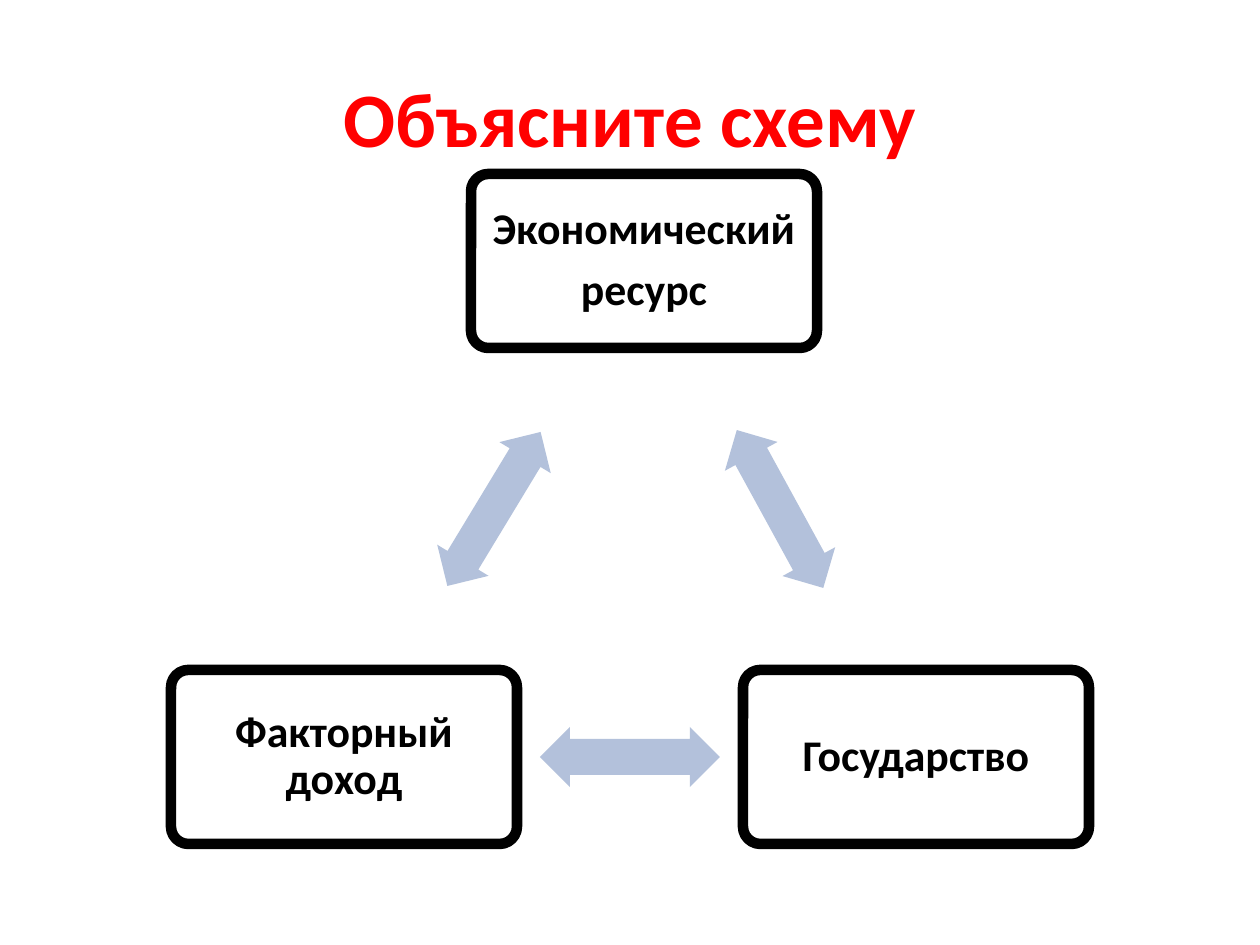
from dataclasses import dataclass

from pptx import Presentation
from pptx.dml.color import RGBColor
from pptx.enum.shapes import MSO_SHAPE
from pptx.enum.text import MSO_ANCHOR, PP_ALIGN
from pptx.util import Emu, Pt

PX_PER_INCH = 126


def px(length):
    return Emu(round(length * 914400 / PX_PER_INCH))


@dataclass(frozen=True)
class Theme:
    font: str = "Calibri"
    title_color: RGBColor = RGBColor(0xFF, 0x00, 0x00)
    ink: RGBColor = RGBColor(0x00, 0x00, 0x00)
    arrow: RGBColor = RGBColor(0xB3, 0xC1, 0xDB)
    title_size: Pt = Pt(44)
    label_size: Pt = Pt(25)
    label_gap: Pt = Pt(8)
    border: Pt = Pt(6)


class SchemeSlide:
    BOX_SIZE = (346, 174)
    ARROW_SIZE = (180, 60)
    INSET = 12

    def __init__(self, slide, theme):
        self.slide = slide
        self.theme = theme

    def style(self, paragraph, size, color):
        paragraph.alignment = PP_ALIGN.CENTER
        font = paragraph.font
        font.name, font.size, font.bold = self.theme.font, size, True
        font.color.rgb = color

    def title(self, wording, left, top, width, height):
        title = self.slide.shapes.title
        title.left, title.top = px(left), px(top)
        title.width, title.height = px(width), px(height)
        frame = title.text_frame
        frame.text = wording
        frame.vertical_anchor = MSO_ANCHOR.MIDDLE
        self.style(frame.paragraphs[0], self.theme.title_size, self.theme.title_color)

    def centred_shape(self, preset, center, size):
        (x, y), (width, height) = center, size
        shape = self.slide.shapes.add_shape(
            preset, px(x - width / 2), px(y - height / 2), px(width), px(height))
        shape.shadow.inherit = False
        return shape

    def box(self, label, center):
        box = self.centred_shape(MSO_SHAPE.ROUNDED_RECTANGLE, center, self.BOX_SIZE)
        box.adjustments[0] = 0.1
        box.fill.background()
        box.line.color.rgb = self.theme.ink
        box.line.width = self.theme.border
        frame = box.text_frame
        frame.word_wrap = True
        frame.vertical_anchor = MSO_ANCHOR.MIDDLE
        frame.margin_left = frame.margin_right = px(self.INSET)
        frame.margin_top = frame.margin_bottom = px(self.INSET)
        frame.text = label
        for paragraph in frame.paragraphs:
            paragraph.line_spacing = 0.9
            paragraph.space_after = self.theme.label_gap
            self.style(paragraph, self.theme.label_size, self.theme.ink)

    def arrow(self, center, rotation):
        arrow = self.centred_shape(MSO_SHAPE.LEFT_RIGHT_ARROW, center, self.ARROW_SIZE)
        arrow.adjustments[0] = 0.6
        arrow.adjustments[1] = 0.5
        arrow.rotation = rotation
        arrow.fill.solid()
        arrow.fill.fore_color.rgb = self.theme.arrow
        arrow.line.fill.background()


def main():
    presentation = Presentation()
    presentation.slide_width, presentation.slide_height = px(1260), px(945)
    title_only = presentation.slide_layouts[5]
    scheme = SchemeSlide(presentation.slides.add_slide(title_only), Theme())

    scheme.title("Объясните схему", 63, 38, 1134, 158)

    resource, state, income = (644, 261), (916, 757), (344, 757)
    links = [
        ("Экономический\nресурс", resource, state, 61.3),
        ("Государство", state, income, 180),
        ("Факторный доход", income, resource, 301.2),
    ]
    for label, start, end, rotation in links:
        scheme.box(label, start)
        midpoint = [(a + b) / 2 for a, b in zip(start, end)]
        scheme.arrow(midpoint, rotation)

    presentation.save("out.pptx")


if __name__ == "__main__":
    main()
